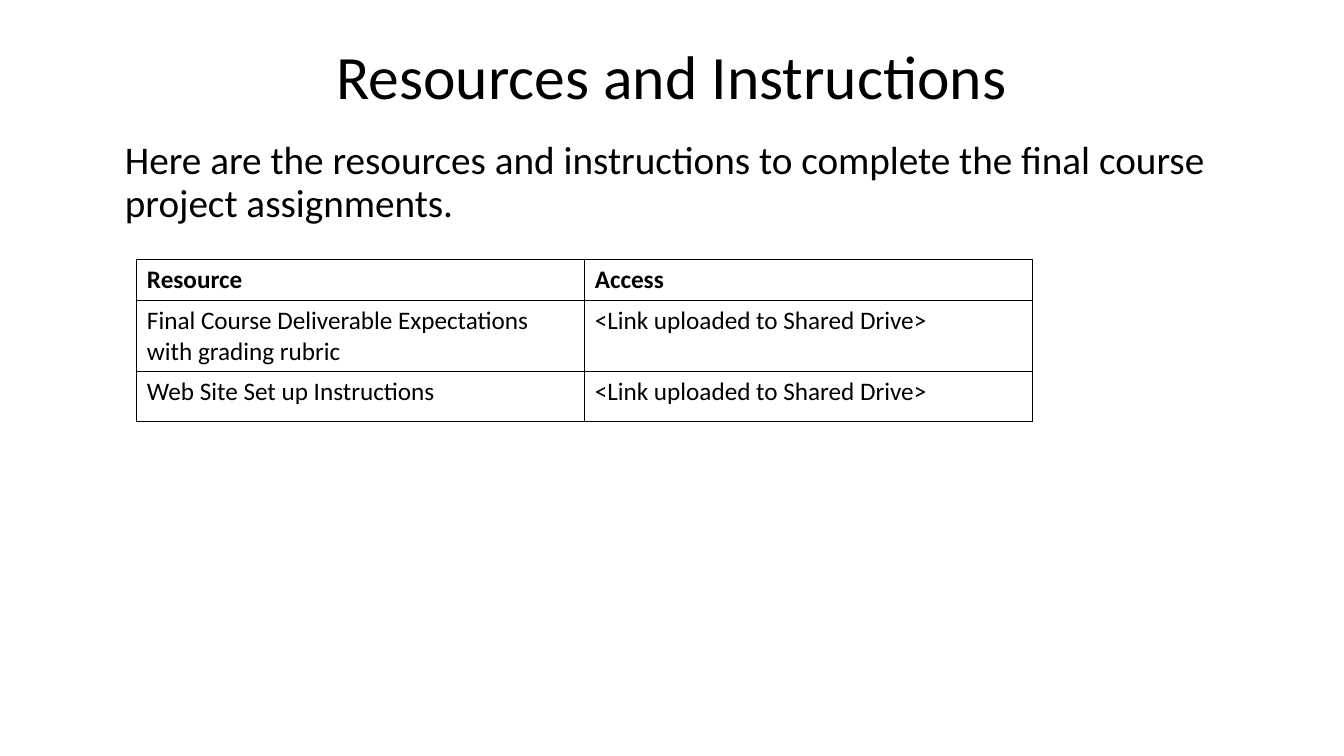
from lxml.etree import SubElement
from pptx import Presentation
from pptx.dml.color import RGBColor
from pptx.enum.text import MSO_ANCHOR, PP_ALIGN
from pptx.oxml.ns import qn
from pptx.util import Cm, Pt

COLORS = {"ink": "000000", "paper": "FFFFFF"}
FONT = "Calibri"
RESOURCES = [
    (["Resource"], ["Access"]),
    (["Final Course Deliverable Expectations", "with grading rubric"],
     ["<Link uploaded to Shared Drive>"]),
    (["Web Site Set up Instructions"], ["<Link uploaded to Shared Drive>"]),
]
ROW_HEIGHTS = [1.03, 1.8, 1.25]


def add_text(paragraph, words, size, bold=False):
    run = paragraph.add_run()
    run.text = words
    run.font.name = FONT
    run.font.size = Pt(size)
    run.font.bold = bold
    run.font.color.rgb = RGBColor.from_string(COLORS["ink"])


def add_heading(slide, box, words, size, align, anchor, space_before=0):
    frame = slide.shapes.add_textbox(*map(Cm, box)).text_frame
    frame.word_wrap = True
    frame.vertical_anchor = anchor
    paragraph = frame.paragraphs[0]
    paragraph.alignment = align
    paragraph.line_spacing = 0.9
    paragraph.space_before = Pt(space_before)
    add_text(paragraph, words, size)


def outline_cell(cell):
    properties = cell._tc.get_or_add_tcPr()
    for position, side in enumerate(("lnL", "lnR", "lnT", "lnB")):
        border = SubElement(properties, qn(f"a:{side}"), w=str(Pt(1)))
        properties.insert(position, border)
        paint = SubElement(border, qn("a:solidFill"))
        SubElement(paint, qn("a:srgbClr"), val=COLORS["ink"])


def add_resources(slide, box):
    left, top, width, height = map(Cm, box)
    resources = slide.shapes.add_table(
        len(RESOURCES), len(RESOURCES[0]), left, top, width, height).table
    resources.first_row = False
    resources.horz_banding = False
    for row_index, entry in enumerate(RESOURCES):
        resources.rows[row_index].height = Cm(ROW_HEIGHTS[row_index])
        for column_index, lines in enumerate(entry):
            cell = resources.cell(row_index, column_index)
            cell.fill.solid()
            cell.fill.fore_color.rgb = RGBColor.from_string(COLORS["paper"])
            outline_cell(cell)
            frame = cell.text_frame
            for line_index, line in enumerate(lines):
                paragraph = frame.add_paragraph() if line_index else frame.paragraphs[0]
                add_text(paragraph, line, 18, bold=row_index == 0)


def main():
    deck = Presentation()
    deck.slide_width, deck.slide_height = Cm(33.87), Cm(19.05)
    slide = deck.slides.add_slide(deck.slide_layouts[6])
    add_heading(slide, (2.33, 1.02, 29.21, 1.98), "Resources and Instructions",
                44, PP_ALIGN.CENTER, MSO_ANCHOR.MIDDLE)
    add_resources(slide, (3.45, 6.54, 22.57, sum(ROW_HEIGHTS)))
    add_heading(slide, (2.9, 3.43, 28.24, 2.44),
                "Here are the resources and instructions to complete "
                "the final course project assignments.",
                28, PP_ALIGN.LEFT, MSO_ANCHOR.TOP, space_before=10)
    deck.save("out.pptx")


if __name__ == "__main__":
    main()
